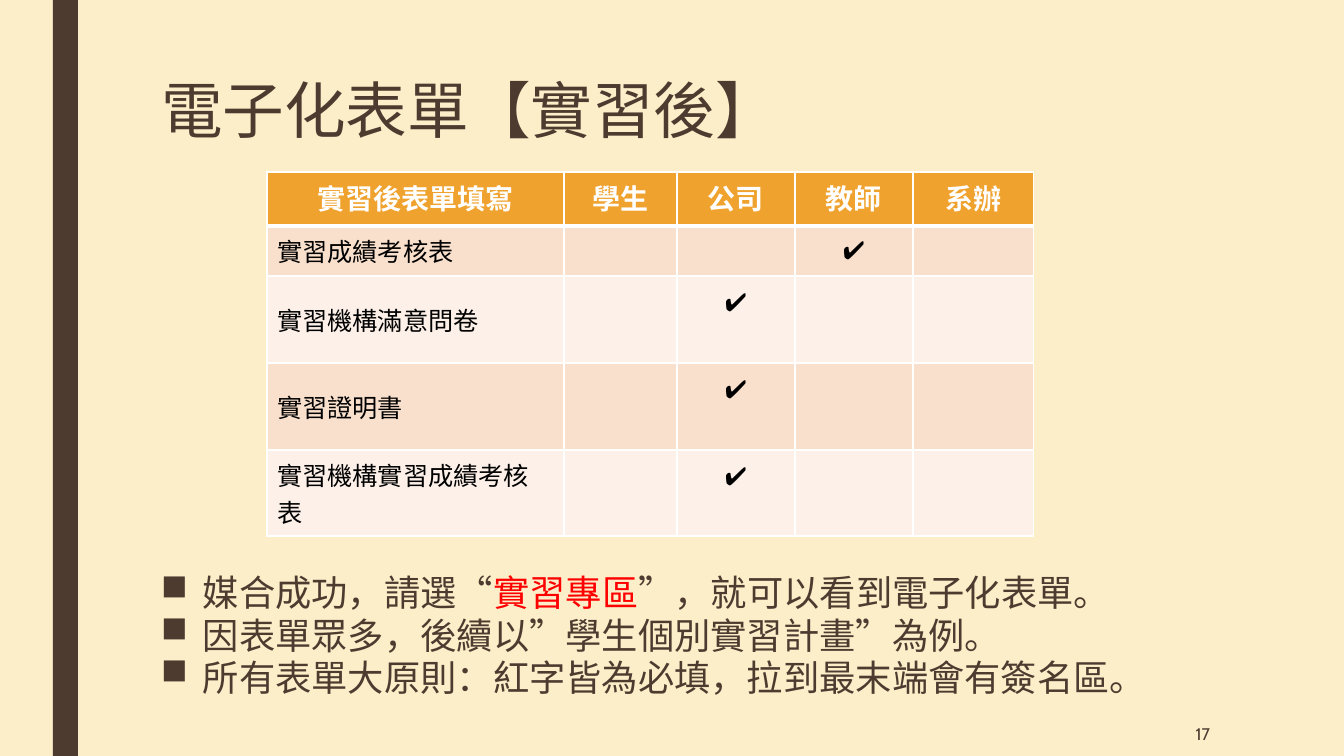
from lxml import etree
from pptx import Presentation
from pptx.dml.color import RGBColor
from pptx.enum.shapes import MSO_SHAPE
from pptx.enum.text import MSO_ANCHOR, MSO_AUTO_SIZE, PP_ALIGN
from pptx.oxml.ns import qn
from pptx.util import Pt

PX = 12700 * 72 / 100.8
CENTER, RIGHT = PP_ALIGN.CENTER, PP_ALIGN.RIGHT
TOP, MIDDLE = MSO_ANCHOR.TOP, MSO_ANCHOR.MIDDLE
BROWN, WHITE, BLACK, RED = "4E3B30", "FFFFFF", "000000", "FF0000"


def px(*lengths):
    return [round(length * PX) for length in lengths]


def color(value):
    return RGBColor.from_string(value)


presentation = Presentation()
presentation.slide_width, presentation.slide_height = px(1344, 756)
slide = presentation.slides.add_slide(presentation.slide_layouts[5])
slide.background.fill.solid()
slide.background.fill.fore_color.rgb = color("FBEEC9")

# Side bar
bar = slide.shapes.add_shape(MSO_SHAPE.RECTANGLE, *px(53, 0, 25, 756))
bar.shadow.inherit = False
bar.fill.solid()
bar.fill.fore_color.rgb = color(BROWN)
bar.line.fill.background()

# Title
title = slide.shapes.title
title.left, title.top, title.width, title.height = px(151, 76, 1058, 163)
title.text_frame.text = "電子化表單【實習後】"
title.text_frame.vertical_anchor = TOP
title.text_frame.auto_size = MSO_AUTO_SIZE.NONE
paragraph = title.text_frame.paragraphs[0]
paragraph.alignment = PP_ALIGN.LEFT
paragraph.line_spacing = 0.89
paragraph.font.size = Pt(44)
paragraph.font.name = "Cabin"
paragraph.font.color.rgb = color(BROWN)

# Table of forms and who fills them in
headers = ["實習後表單填寫", "學生", "公司", "教師", "系辦"]
forms = [("實習成績考核表", "教師"), ("實習機構滿意問卷", "公司"),
         ("實習證明書", "公司"), ("實習機構實習成績考核表", "公司")]
rows = [headers] + [
    [form] + ["✔" if header == filler else "" for header in headers[1:]]
    for form, filler in forms]
column_widths = [297, 113, 118, 118, 121]
row_heights = [54, 50, 87, 87, 86]

table = slide.shapes.add_table(
    len(rows), len(headers),
    *px(267, 172, sum(column_widths), sum(row_heights))).table
for column, width in zip(table.columns, px(*column_widths)):
    column.width = width
for row, height in zip(table.rows, px(*row_heights)):
    row.height = height

for row_index, row in enumerate(rows):
    is_header = row_index == 0
    fill = "F0A22E" if is_header else ["FCF0E8", "F9E0CD"][row_index % 2]
    for column_index, text in enumerate(row):
        cell = table.cell(row_index, column_index)
        cell.text = text
        cell.vertical_anchor = TOP if is_header else MIDDLE
        # Ticks sit above the middle of the tall rows
        if row_index > 1 and column_index > 0:
            cell.margin_bottom = px(38)[0]
        paragraph = cell.text_frame.paragraphs[0]
        if is_header or column_index > 0:
            paragraph.alignment = CENTER
        is_arial = row_index > 1 and column_index == 0
        paragraph.font.name = "Arial" if is_arial else "Cabin"
        paragraph.font.size = Pt(20 if is_header else 18)
        paragraph.font.bold = is_header
        paragraph.font.color.rgb = color(WHITE if is_header else BLACK)
        # White borders, thick under the header; they precede the fill
        properties = cell._tc.get_or_add_tcPr()
        for side in ("lnL", "lnR", "lnT", "lnB"):
            is_thick = (row_index, side) in ((0, "lnB"), (1, "lnT"))
            border = etree.SubElement(properties, qn("a:" + side),
                                      w=str(Pt(3 if is_thick else 1)))
            solid = etree.SubElement(border, qn("a:solidFill"))
            etree.SubElement(solid, qn("a:srgbClr"), val=WHITE)
        cell.fill.solid()
        cell.fill.fore_color.rgb = color(fill)

# Bulleted notes
notes = [
    [("媒合成功，請選“", BROWN), ("實習專區", RED),
     ("”，就可以看到電子化表單。", BROWN)],
    [("因表單眾多，後續以”學生個別實習計畫”為例。", BROWN)],
    [("所有表單大原則：紅字皆為必填，拉到最末端會有簽名區。", BROWN)],
]
frame = slide.shapes.add_textbox(*px(151, 576, 1096, 152)).text_frame
frame.word_wrap = True
for index, note in enumerate(notes):
    paragraph = frame.paragraphs[0] if index == 0 else frame.add_paragraph()
    paragraph.line_spacing = 0.74
    paragraph.space_before = Pt(6)
    paragraph.space_after = Pt(1.3)
    paragraph.font.size = Pt(25.9)
    paragraph.font.name = "Noto Sans CJK TC"
    paragraph.font.color.rgb = color(BROWN)
    for text, text_color in note:
        run = paragraph.add_run()
        run.text = text
        run.font.color.rgb = color(text_color)
    properties = paragraph._p.get_or_add_pPr()
    indent = px(42)[0]
    properties.set("marL", str(indent))
    properties.set("indent", str(-indent))
    bullet = etree.Element(qn("a:buChar"), char="■")
    properties.find(qn("a:defRPr")).addprevious(bullet)

# Slide number
frame = slide.shapes.add_textbox(*px(1044, 712, 176, 44)).text_frame
frame.word_wrap = True
frame.vertical_anchor = MIDDLE
paragraph = frame.paragraphs[0]
paragraph.text = "17"
paragraph.alignment = RIGHT
paragraph.font.size = Pt(12)
paragraph.font.name = "Cabin"
paragraph.font.color.rgb = color(BROWN)

presentation.save("out.pptx")
